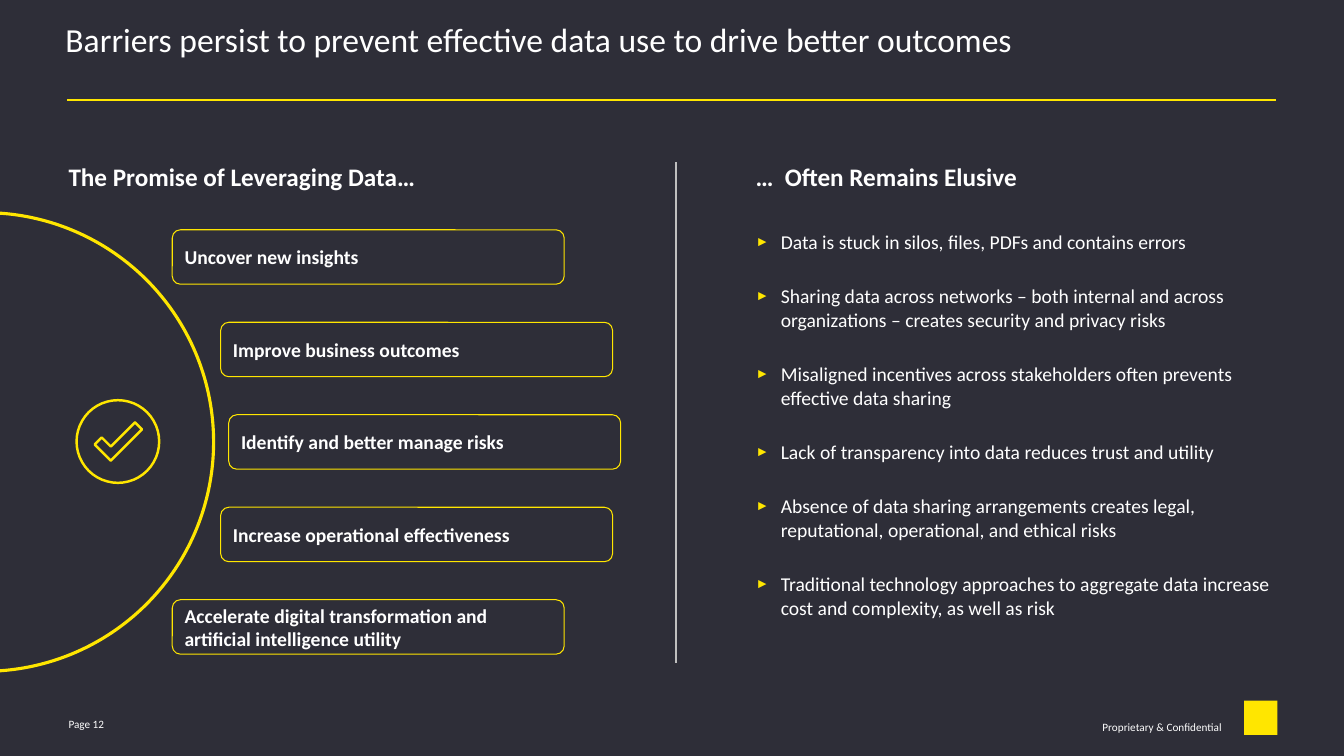
from collections import namedtuple
from dataclasses import dataclass

from lxml.etree import SubElement
from pptx import Presentation
from pptx.dml.color import RGBColor as Color
from pptx.enum.shapes import MSO_CONNECTOR as Connector, MSO_SHAPE as Shape
from pptx.enum.text import MSO_ANCHOR as Anchor, MSO_AUTO_SIZE as AutoSize, PP_ALIGN as Align
from pptx.oxml.ns import qn
from pptx.util import Pt

PX = 9144
Box = namedtuple("Box", "left top width height")


@dataclass(frozen=True)
class Theme:
    """Colours, font and type sizes of the slide."""
    dark: Color = Color.from_string("2E2E38")
    yellow: Color = Color.from_string("FFE600")
    white: Color = Color.from_string("FFFFFF")
    grey: Color = Color.from_string("BFBFBF")
    font: str = "Calibri"
    title: int = 24
    heading: int = 18
    body: int = 14
    small: int = 8


THEME = Theme()
TITLE = "Barriers persist to prevent effective data use to drive better outcomes"
PROMISES = [
    (56, "Uncover new insights"),
    (104, "Improve business outcomes"),
    (112, "Identify and better manage risks"),
    (104, "Increase operational effectiveness"),
    (56, "Accelerate digital transformation and artificial intelligence utility"),
]
BARRIERS = [
    "Data is stuck in silos, files, PDFs and contains errors",
    "Sharing data across networks – both internal and across organizations – creates security and privacy risks",
    "Misaligned incentives across stakeholders often prevents effective data sharing",
    "Lack of transparency into data reduces trust and utility",
    "Absence of data sharing arrangements creates legal, reputational, operational, and ethical risks",
    "Traditional technology approaches to aggregate data increase cost and complexity, as well as risk",
]


def emu(*lengths):
    """Turn px lengths into EMU."""
    return [round(length * PX) for length in lengths]


def set_values(target, values):
    """Set each named attribute of the target."""
    for name, value in values.items():
        setattr(target, name, value)


def write(shape, lines, size, bold=False, inset=(0, 0), frame_format=None, para_format=None):
    """Fill a shape with formatted paragraphs and return them."""
    frame = shape.text_frame
    across, down = emu(*inset)
    set_values(frame, {
        "word_wrap": True, "auto_size": AutoSize.NONE, "vertical_anchor": Anchor.TOP,
        "margin_left": across, "margin_right": across,
        "margin_top": down, "margin_bottom": down, **(frame_format or {})})
    frame.text = "\n".join(lines)
    for para in frame.paragraphs:
        set_values(para, {"alignment": Align.LEFT, **(para_format or {})})
        for span in para.runs:
            set_values(span.font, {"name": THEME.font, "size": Pt(size), "bold": bold})
            span.font.color.rgb = THEME.white
    return frame.paragraphs


def add_text(page, box, lines, size, **options):
    """Add a text box and return its paragraphs."""
    return write(page.shapes.add_textbox(*emu(*box)), lines, size, **options)


def outline(shape, weight):
    """Give a shape a yellow outline and no fill."""
    shape.shadow.inherit = False
    shape.fill.background()
    shape.line.color.rgb = THEME.yellow
    shape.line.width = Pt(weight)
    return shape


def add_outlined(page, kind, box, weight):
    """Add an outlined preset shape."""
    return outline(page.shapes.add_shape(kind, *emu(*box)), weight)


def add_line(page, start, end, color, weight):
    """Add a straight line without a shadow."""
    line = page.shapes.add_connector(Connector.STRAIGHT, *emu(*start, *end))
    line.line.color.rgb = color
    line.line.width = Pt(weight)
    SubElement(line._element.spPr, qn("a:effectLst"))


def add_heading(page, box, text):
    """Add a column heading at the top of a box."""
    add_text(page, Box(box.left, box.top, 432, 30), [text], THEME.heading, bold=True,
             inset=(0, 4), para_format={"line_spacing": 0.85})


def add_header(page, box):
    """Place the title and the rule beneath it."""
    title = page.shapes.title
    set_values(title, dict(zip(box._fields, emu(*box))))
    write(title, [TITLE], THEME.title, para_format={"line_spacing": 0.85})
    rule = box.top + 74
    add_line(page, (box.left + 2, rule), (box.left + box.width + 1, rule), THEME.yellow, 1.5)


def add_check(page, box):
    """Draw a ringed check mark."""
    add_outlined(page, Shape.OVAL, box, 1.75)
    points = [(18, 44), (25, 37), (34, 46), (58, 22), (65, 29), (34, 60)]
    corners = [emu(box.left + x, box.top + y) for x, y in points]
    builder = page.shapes.build_freeform(*corners[0])
    builder.add_line_segments(corners[1:], close=True)
    outline(builder.convert_to_shape(), 1.75)


def add_promises(page, box):
    """Place the arc, the check mark and the promise boxes."""
    add_outlined(page, Shape.OVAL, Box(box.left - 311, box.top + 50, 455, 455), 2.25)
    add_heading(page, box, "The Promise of Leveraging Data…")
    height, first = 54, box.top + 67
    pitch = (box.top + box.height - height - first) / (len(PROMISES) - 1)
    for row, (shift, text) in enumerate(PROMISES):
        place = Box(box.left + 47 + shift, first + row * pitch, 389, height)
        pill = add_outlined(page, Shape.ROUNDED_RECTANGLE, place, 0.75)
        pill.adjustments[0] = 0.15
        write(pill, [text], THEME.body, bold=True, inset=(10, 5),
              frame_format={"vertical_anchor": Anchor.MIDDLE})
    add_check(page, Box(box.left + 8, box.top + 236, 82, 82))


def add_bullet(para):
    """Give a paragraph a yellow arrow bullet."""
    settings = para._p.get_or_add_pPr()
    indent = emu(25)[0]
    settings.set("marL", str(indent))
    settings.set("indent", str(-indent))
    color = SubElement(settings, qn("a:buClr"))
    SubElement(color, qn("a:srgbClr"), val=str(THEME.yellow))
    SubElement(settings, qn("a:buSzPct"), val="70000")
    SubElement(settings, qn("a:buFont"), typeface="Arial")
    SubElement(settings, qn("a:buChar"), char="►")


def add_barriers(page, box):
    """Place the heading and the bulleted barriers."""
    add_heading(page, box, "…  Often Remains Elusive")
    body = Box(box.left, box.top + 67, box.width, box.height - 67)
    for para in add_text(page, body, BARRIERS, THEME.body, para_format={"space_after": Pt(22)}):
        add_bullet(para)


def add_footer(page, box):
    """Place the page number, the notice and the corner mark."""
    add_text(page, Box(box.left, box.top + 13, 72, 20), ["Page 12"], THEME.small,
             frame_format={"vertical_anchor": Anchor.MIDDLE})
    right = box.left + box.width
    add_text(page, Box(right - 205, box.top + 20, 150, 14), ["Proprietary & Confidential"],
             THEME.small, para_format={"alignment": Align.RIGHT})
    mark = page.shapes.add_shape(Shape.RECTANGLE, *emu(right - 33, box.top, 33, box.height))
    mark.shadow.inherit = False
    mark.fill.solid()
    mark.fill.fore_color.rgb = THEME.yellow
    mark.line.fill.background()


def main():
    """Build the deck and save it."""
    deck = Presentation()
    deck.slide_width, deck.slide_height = emu(1334, 750)
    page = deck.slides.add_slide(deck.slide_layouts.get_by_name("Title Only"))
    page.background.fill.solid()
    page.background.fill.fore_color.rgb = THEME.dark
    add_header(page, Box(65, 25, 1201, 72))
    add_promises(page, Box(68, 161, 548, 488))
    add_line(page, (671, 161), (671, 658), THEME.grey, 0.75)
    add_barriers(page, Box(750, 161, 516, 469))
    add_footer(page, Box(68, 695, 1200, 34))
    deck.save("out.pptx")


if __name__ == "__main__":
    main()
